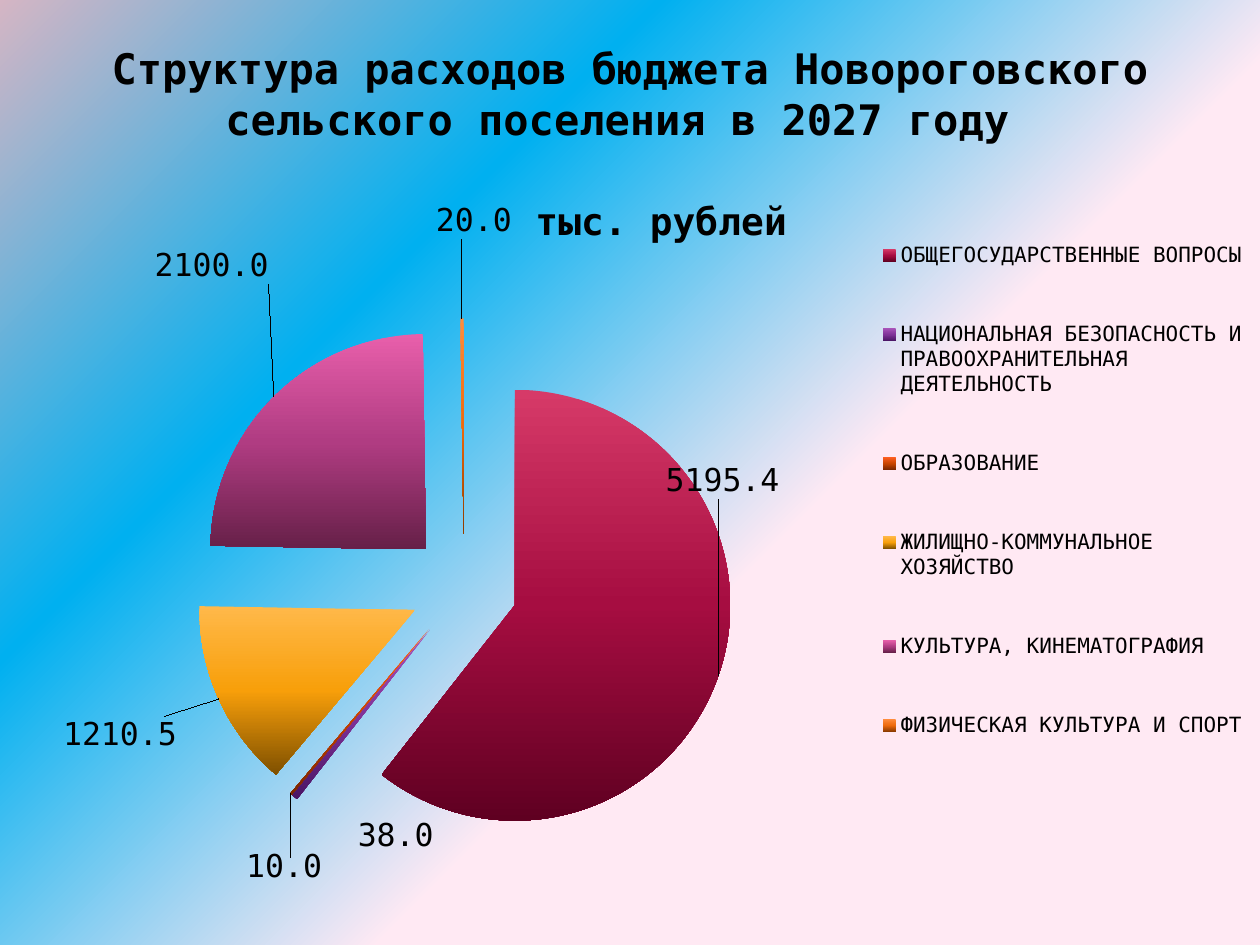
from pptx import Presentation
from pptx.chart.data import CategoryChartData as Data
from pptx.dml.color import RGBColor as RGB
from pptx.enum.chart import XL_CHART_TYPE as Kind, XL_LABEL_POSITION as Spot, XL_LEGEND_POSITION as Side
from pptx.enum.text import MSO_ANCHOR as Anchor, PP_ALIGN as Align
from pptx.oxml import parse_xml as make
from pptx.oxml.ns import nsdecls, qn
from pptx.util import Inches, Pt

FACE = "DejaVu Sans Mono"
WIDE, HIGH = Inches(10), Inches(7.5)
UNIT = "тыс. рублей"
HEAD = "Структура расходов бюджета Новороговского сельского поселения в 2027 году "
PATH = '<a:path path="circle"><a:fillToRect l="100000" t="100000"/></a:path>'
DOWN = '<a:lin ang="5400000" scaled="0"/>'
SKY = [(0, "FFE9F3"), (40, "FFE9F3"), (70, "00B0F0"), (100, "D5B5C4")]
ROWS = [
    ("ОБЩЕГОСУДАРСТВЕННЫЕ ВОПРОСЫ", 5195.4, ("D63A68", "A60D41", "5F0021"), (-0.05, -0.3)),
    ("НАЦИОНАЛЬНАЯ БЕЗОПАСНОСТЬ И ПРАВООХРАНИТЕЛЬНАЯ ДЕЯТЕЛЬНОСТЬ", 38,
     ("A853B9", "803399", "4A1565"), (0.12, 0.02)),
    ("ОБРАЗОВАНИЕ", 10, ("FF5F22", "C94400", "7A2600"), (0.03, 0.08)),
    ("ЖИЛИЩНО-КОММУНАЛЬНОЕ ХОЗЯЙСТВО", 1210.5, ("FFB94A", "F89F0A", "7F5000"), (-0.04, 0.02)),
    ("КУЛЬТУРА, КИНЕМАТОГРАФИЯ", 2100, ("E85FAB", "B03C82", "662048"), (0, -0.15)),
    ("ФИЗИЧЕСКАЯ КУЛЬТУРА И СПОРТ", 20, ("FF8C3C", "EE6A0C", "8A3A00"), (0.01, -0.1)),
]


def ink(code):
    return RGB.from_string(code)


def style(font, size, bold=False):
    for key, val in {"name": FACE, "size": Pt(size), "bold": bold}.items():
        setattr(font, key, val)
    font.color.rgb = ink("000000")


def blend(node, stops, tail):
    dots = "".join(f'<a:gs pos="{pos * 1000}"><a:srgbClr val="{ink(code)}"/></a:gs>'
                   for pos, code in stops)
    node.getparent().replace(node, make(
        f'<a:gradFill {nsdecls("a")} rotWithShape="1"><a:gsLst>{dots}</a:gsLst>{tail}</a:gradFill>'))


def layout(**vals):
    body = "".join(f'<c:{key} val="{val}"/>' for key, val in vals.items())
    return make(f'<c:layout {nsdecls("c")}><c:manualLayout>{body}</c:manualLayout></c:layout>')


def frame(x, y, w, h, **more):
    return layout(**more, xMode="edge", yMode="edge", x=x, y=y, w=w, h=h)


def back(slide):
    slide.background.fill.gradient()
    blend(next(slide.element.iter(qn("a:gradFill"))), SKY, PATH)


def title(slide, box):
    text = slide.shapes.add_textbox(*box).text_frame
    for key, val in {"word_wrap": True, "vertical_anchor": Anchor.MIDDLE,
                     "margin_bottom": Inches(0.42)}.items():
        setattr(text, key, val)
    para = text.paragraphs[0]
    para.text, para.alignment = HEAD, Align.CENTER
    style(para.runs[0].font, 24, True)


def slices(chart):
    plot = chart.plots[0]
    plot.vary_by_categories = True
    series = plot.series[0]
    tags = series.data_labels
    for key, val in {"show_value": True, "number_format": "0.0",
                     "number_format_is_linked": False, "position": Spot.OUTSIDE_END}.items():
        setattr(tags, key, val)
    style(tags.font, 18)
    for i in range(len(ROWS)):
        point = series.points[i]
        point.format.fill.gradient()
        style(point.data_label.font, 18)
        point.data_label.position = Spot.OUTSIDE_END
    root = chart.element
    fills, marks = (list(root.iter(qn(tag))) for tag in ("a:gradFill", "c:dLbl"))
    for (_, _, tones, (x, y)), fill, mark in zip(ROWS, fills, marks):
        blend(fill, zip((0, 50, 100), tones), DOWN)
        mark.insert(1, layout(x=x, y=y))
        mark.insert(2, make(f'<c:numFmt {nsdecls("c")} formatCode="0.0" sourceLinked="0"/>'))
    first = next(root.iter(qn("c:dPt")))
    first.addprevious(make(f'<c:explosion {nsdecls("c")} val="25"/>'))


def pie(slide, box):
    data = Data(number_format="0.0")
    data.categories = [row[0] for row in ROWS]
    data.add_series(UNIT, [row[1] for row in ROWS])
    chart = slide.shapes.add_chart(Kind.PIE, *box, data).chart
    style(chart.font, 18)
    chart.has_title = True
    head = chart.chart_title.text_frame
    head.text = UNIT
    style(head.paragraphs[0].runs[0].font, 21.6, True)
    chart.has_legend = True
    key = chart.legend
    key.position, key.include_in_layout = Side.RIGHT, False
    style(key.font, 12)
    slices(chart)
    area = next(chart.element.iter(qn("c:plotArea")))
    for node in area.findall(qn("c:layout")):
        area.remove(node)
    area.insert(0, frame(0.11, 0.21, 0.45, 0.75, layoutTarget="inner"))
    legend = next(chart.element.iter(qn("c:legend")))
    for node in legend.findall(qn("c:layout")):
        legend.remove(node)
    legend.insert(1, frame(0.67, 0.03, 0.33, 0.84))


def main():
    deck = Presentation()
    deck.slide_width, deck.slide_height = WIDE, HIGH
    slide = deck.slides.add_slide(deck.slide_layouts[6])
    back(slide)
    pie(slide, (int(WIDE * 0.05), Inches(1.33), int(WIDE * 0.95), int(HIGH * 0.76)))
    title(slide, (int(WIDE * 0.05), int(HIGH * 0.04), int(WIDE * 0.9), Inches(1.25)))
    deck.save("out.pptx")


if __name__ == "__main__":
    main()
